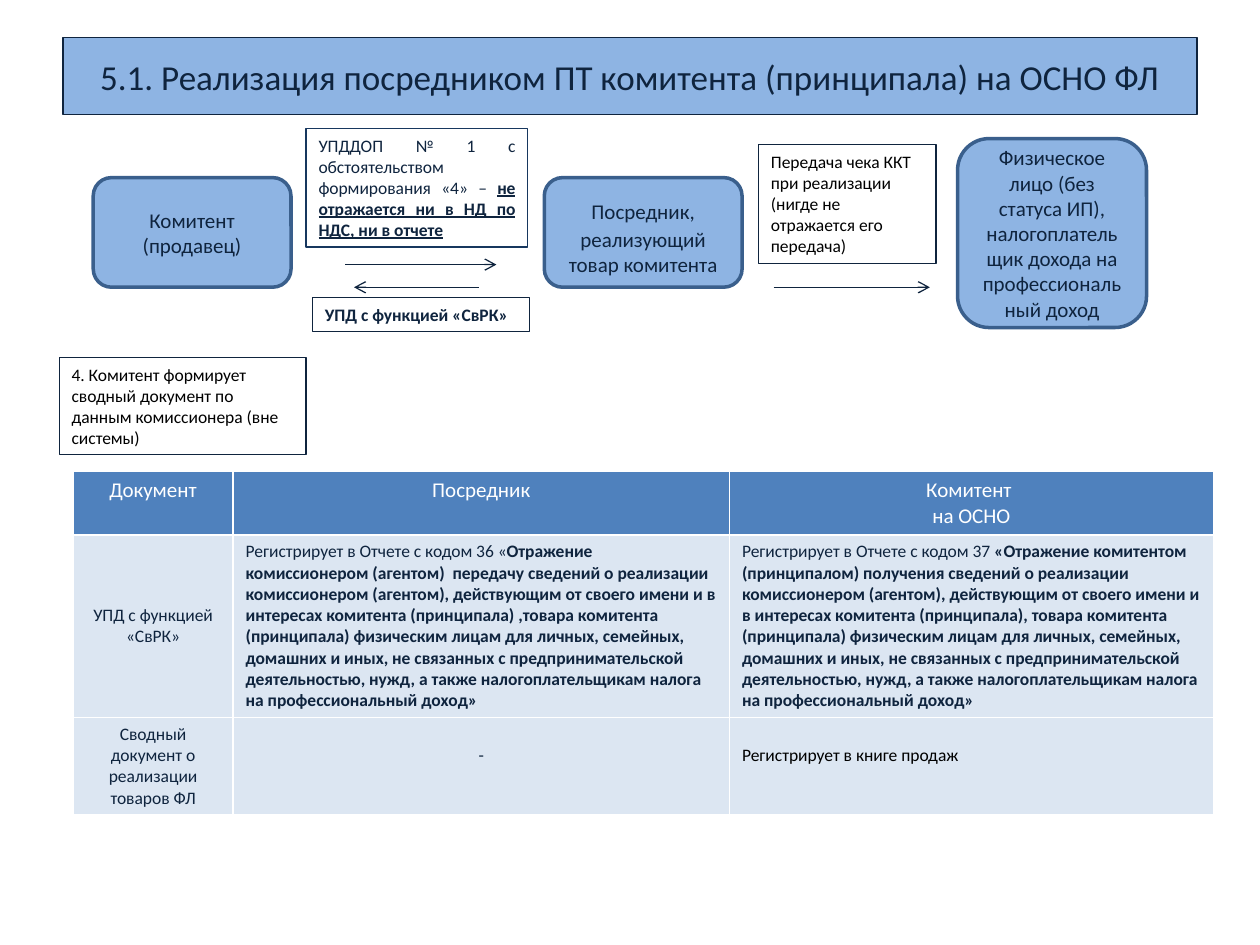
import pptx
import pptx.util
import pptx.dml.color
import pptx.enum.shapes
import pptx.enum.text
import pptx.oxml
import pptx.oxml.ns
import lxml.etree

Inches = pptx.util.Inches
Pt = pptx.util.Pt
RGBColor = pptx.dml.color.RGBColor
MSO_SHAPE = pptx.enum.shapes.MSO_SHAPE
PP_ALIGN = pptx.enum.text.PP_ALIGN
MSO_ANCHOR = pptx.enum.text.MSO_ANCHOR
qn = pptx.oxml.ns.qn

NAVY = RGBColor(0x0F, 0x24, 0x3E)
DEEP_BLUE = RGBColor(0x17, 0x37, 0x5E)
EDGE_BLUE = RGBColor(0x3A, 0x5F, 0x8C)
LIGHT_BLUE = RGBColor(0x8E, 0xB4, 0xE3)
HEADER_BLUE = RGBColor(0x4F, 0x81, 0xBD)
PALE_BLUE = RGBColor(0xDC, 0xE6, 0xF2)
WHITE = RGBColor(0xFF, 0xFF, 0xFF)
BLACK = RGBColor(0x00, 0x00, 0x00)
LEFT, CENTER, JUSTIFY = PP_ALIGN.LEFT, PP_ALIGN.CENTER, PP_ALIGN.JUSTIFY


def add_runs(p, runs, size, color, align):
    """Each run is (text, options); options may hold bold, underline or size."""
    p.alignment = align
    for text, options in runs:
        r = p.add_run()
        r.text = text
        r.font.name = "Calibri"
        r.font.size = Pt(options.get("size", size))
        r.font.color.rgb = color
        r.font.bold = options.get("bold", False)
        r.font.underline = options.get("underline", False)


def add_box(kind, box, fill, line, width, runs, size, color, align, anchor):
    sp = s.shapes.add_shape(kind, *[Inches(v) for v in box])
    sp.shadow.inherit = False
    if fill is None:
        sp.fill.background()
    else:
        sp.fill.solid()
        sp.fill.fore_color.rgb = fill
    sp.line.color.rgb = line
    sp.line.width = Pt(width)
    tf = sp.text_frame
    tf.word_wrap = True
    tf.vertical_anchor = anchor
    add_runs(tf.paragraphs[0], runs, size, color, align)


prs = pptx.Presentation()
prs.slide_width, prs.slide_height = Inches(10), Inches(7.5)
s = prs.slides.add_slide(prs.slide_layouts[6])

# Title bar
add_box(MSO_SHAPE.RECTANGLE, (0.5, 0.3, 9, 0.61), LIGHT_BLUE, NAVY, 0.75,
        [("5.1. Реализация посредником ПТ комитента (принципала) на ОСНО ФЛ", {})],
        20, NAVY, CENTER, MSO_ANCHOR.MIDDLE)

# Parties to the deal
parties = [
    ((0.74, 1.41, 1.57, 0.87), [("Комитент (продавец)", {})]),
    ((4.32, 1.41, 1.57, 0.87), [("Посредник,", {}), (" ", {"size": 18}),
                                ("реализующий товар комитента", {})]),
    ((7.6, 1.1, 1.5, 1.5), [("Физическое лицо (без статуса ИП), налогоплательщик "
                             "дохода на профессиональный доход", {})]),
]
for box, runs in parties:
    add_box(MSO_SHAPE.ROUNDED_RECTANGLE, box, LIGHT_BLUE, EDGE_BLUE, 2,
            runs, 12, NAVY, CENTER, MSO_ANCHOR.MIDDLE)

# Document notes
notes = [
    ((2.43, 1.02, 1.76, 0.94), DEEP_BLUE, NAVY, JUSTIFY,
     [("УПДДОП № 1 с обстоятельством формирования «4» – ", {}),
      ("не отражается ни в НД по НДС, ни в отчете", {"bold": True, "underline": True})]),
    ((2.48, 2.36, 1.72, 0.27), NAVY, NAVY, JUSTIFY,
     [("УПД с функцией «СвРК»", {"bold": True})]),
    ((6.02, 1.15, 1.41, 0.94), NAVY, BLACK, LEFT,
     [("Передача чека ККТ при реализации (нигде не отражается его передача)", {})]),
    ((0.47, 2.84, 1.96, 0.77), NAVY, BLACK, LEFT,
     [("4. Комитент формирует сводный документ по данным комиссионера (вне системы)", {})]),
]
for box, line, color, align, runs in notes:
    add_box(MSO_SHAPE.RECTANGLE, box, None, line, 0.75,
            runs, 10, color, align, MSO_ANCHOR.TOP)

# Arrows between the parties
for x1, x2, y in [(2.74, 3.94, 2.1), (3.8, 2.81, 2.28), (6.14, 7.38, 2.28)]:
    c = s.shapes.add_connector(pptx.enum.shapes.MSO_CONNECTOR.STRAIGHT,
                               Inches(x1), Inches(y), Inches(x2), Inches(y))
    c.line.color.rgb = NAVY
    c.line.width = Pt(0.75)
    ln = c.line._get_or_add_ln()
    lxml.etree.SubElement(ln, qn("a:tailEnd"), type="arrow")
    lxml.etree.SubElement(c._element.spPr, qn("a:effectLst"))

# Registration table: each cell is (paragraphs, colour, alignment, anchor, top margin)
TOP, MIDDLE = MSO_ANCHOR.TOP, MSO_ANCHOR.MIDDLE
tail = ("товара комитента (принципала) физическим лицам для личных, семейных, домашних "
        "и иных, не связанных с предпринимательской деятельностью, нужд, а также "
        "налогоплательщикам налога на профессиональный доход»")
agent_text = ("Отражение комиссионером (агентом)  передачу сведений о реализации "
              "комиссионером (агентом), действующим от своего имени и в интересах "
              "комитента (принципала) ," + tail)
principal_text = ("«Отражение комитентом (принципалом) получения сведений о реализации "
                  "комиссионером (агентом), действующим от своего имени и в интересах "
                  "комитента (принципала), " + tail)
rows = [
    [([[("Документ", {})]], WHITE, CENTER, TOP, 0.05),
     ([[("Посредник", {})]], WHITE, CENTER, TOP, 0.05),
     ([[("Комитент ", {})], [("на ОСНО", {})]], WHITE, CENTER, TOP, 0.05)],
    [([[("УПД с функцией «СвРК»", {})]], NAVY, CENTER, MIDDLE, 0.05),
     ([[("Регистрирует в Отчете с кодом 36 «", {}), (agent_text, {"bold": True})]],
      NAVY, LEFT, TOP, 0.05),
     ([[("Регистрирует в Отчете с кодом 37 ", {}), (principal_text, {"bold": True})]],
      NAVY, LEFT, TOP, 0.05)],
    [([[("Сводный документ о реализации товаров ФЛ", {})]], NAVY, CENTER, TOP, 0.05),
     ([[("-", {})]], NAVY, CENTER, TOP, 0.22),
     ([[("Регистрирует в книге продаж", {})]], BLACK, LEFT, TOP, 0.22)],
]
table = s.shapes.add_table(3, 3, Inches(0.58), Inches(3.74),
                           Inches(9.05), Inches(2.7)).table
for column, width in zip(table.columns, (1.27, 3.94, 3.84)):
    column.width = Inches(width)
for row, height in zip(table.rows, (0.5, 1.43, 0.77)):
    row.height = Inches(height)

for i, row in enumerate(rows):
    for j, (paragraphs, color, align, anchor, margin) in enumerate(row):
        cell = table.cell(i, j)
        cell.vertical_anchor = anchor
        cell.margin_top = Inches(margin)
        tf = cell.text_frame
        for k, runs in enumerate(paragraphs):
            p = tf.add_paragraph() if k else tf.paragraphs[0]
            add_runs(p, runs, 10 if i else 12, color, align)
        # Borders precede the fill in the cell properties
        tcPr = cell._tc.get_or_add_tcPr()
        for side in ("lnL", "lnR", "lnT", "lnB"):
            ln = lxml.etree.SubElement(tcPr, qn("a:" + side), w=str(Pt(1)))
            solid = lxml.etree.SubElement(ln, qn("a:solidFill"))
            lxml.etree.SubElement(solid, qn("a:srgbClr"), val=str(WHITE))
        cell.fill.solid()
        cell.fill.fore_color.rgb = PALE_BLUE if i else HEADER_BLUE

prs.save("out.pptx")
